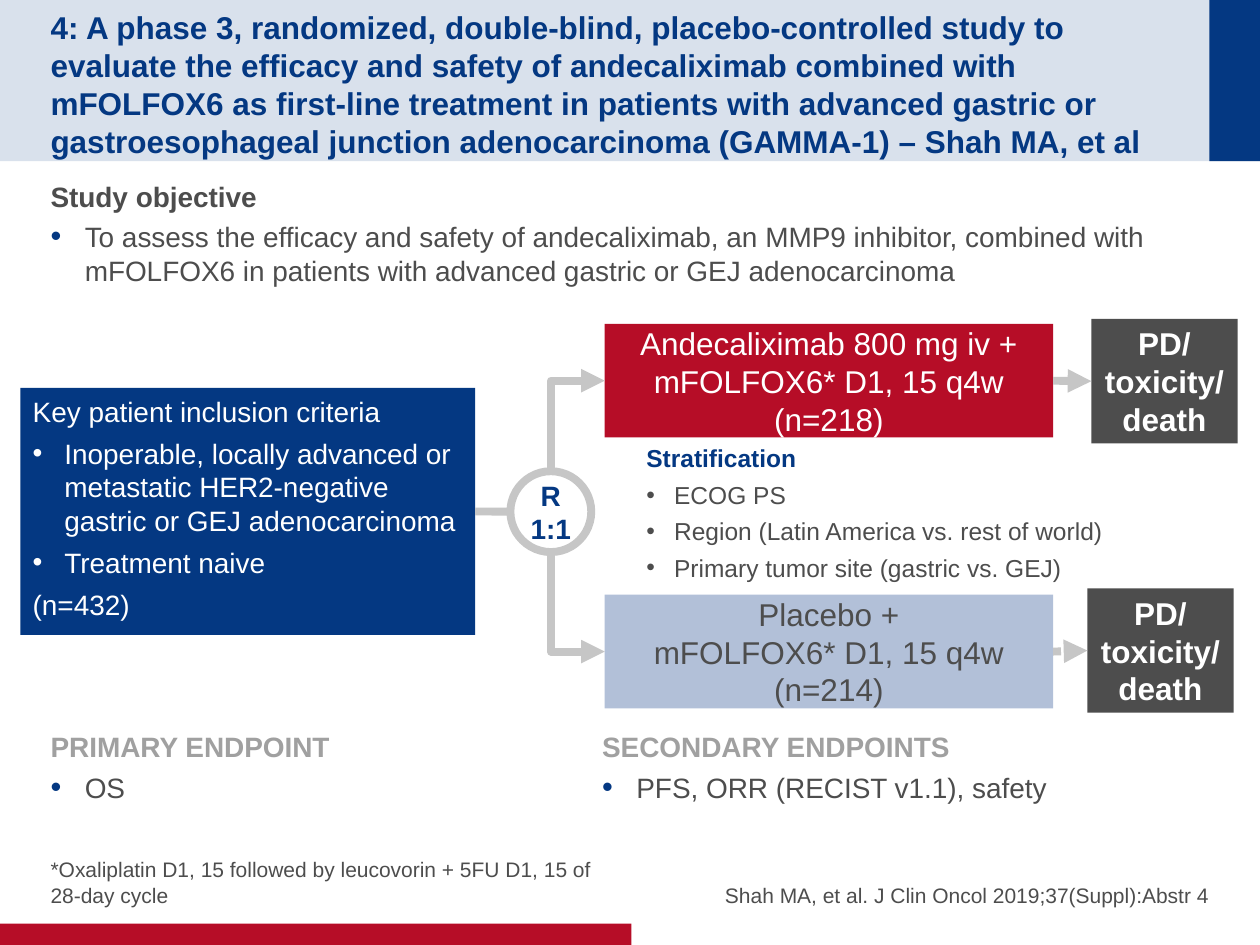
"""Build the GAMMA-1 study design slide."""
from copy import deepcopy

from lxml import etree
from pptx import Presentation
from pptx.dml.color import RGBColor
from pptx.enum.dml import MSO_LINE
from pptx.enum.shapes import MSO_CONNECTOR, MSO_SHAPE
from pptx.enum.text import MSO_ANCHOR, PP_ALIGN
from pptx.oxml.ns import qn
from pptx.util import Cm, Pt

RECT, ROUND, OVAL = MSO_SHAPE.RECTANGLE, MSO_SHAPE.ROUNDED_RECTANGLE, MSO_SHAPE.OVAL
STRAIGHT, ELBOW = MSO_CONNECTOR.STRAIGHT, MSO_CONNECTOR.ELBOW
TOP, MIDDLE, BOTTOM = MSO_ANCHOR.TOP, MSO_ANCHOR.MIDDLE, MSO_ANCHOR.BOTTOM
LEFT, CENTER, RIGHT = PP_ALIGN.LEFT, PP_ALIGN.CENTER, PP_ALIGN.RIGHT
DOTTED = MSO_LINE.ROUND_DOT
C = {"navy": "043882", "red": "B60D27", "text": "4D4D4D", "muted": "A0A0A0",
     "line": "C6C6C6", "pale": "B2C0D8", "white": "FFFFFF"}


def add_box(x, y, w, h, kind=None, fill=None, anchor=TOP, side=0, top=0, bottom=0):
    """Add a text box, or a preset shape when a kind is given."""
    place = Cm(x), Cm(y), Cm(w), Cm(h)
    if kind is None:
        sp = s.shapes.add_textbox(*place)
    else:
        sp = s.shapes.add_shape(kind, *place)
        sp.shadow.inherit = False
        sp.line.fill.background()
        if fill:
            sp.fill.solid()
            sp.fill.fore_color.rgb = RGBColor.from_string(C[fill])
        else:
            sp.fill.background()
    tf = sp.text_frame
    tf.word_wrap = True
    tf.vertical_anchor = anchor
    tf.margin_left = tf.margin_right = Cm(side)
    tf.margin_top, tf.margin_bottom = Cm(top), Cm(bottom)
    return sp


def write(sp, text, size=16, color="text", bold=False, align=LEFT, after=0,
          indent=0, bullet_color=None):
    """Append one paragraph, bulleted when an indent is given."""
    tf = sp.text_frame
    p = tf.add_paragraph() if tf.text else tf.paragraphs[0]
    p.text = text
    p.alignment = align
    p.space_after = Pt(after)
    for r in p.runs:
        r.font.name, r.font.size, r.font.bold = "Arial", Pt(size), bold
        r.font.color.rgb = RGBColor.from_string(C[color])
    for br in p._p.findall(qn("a:br")):
        br.insert(0, deepcopy(p.runs[0]._r.rPr))
    if indent:
        pPr = p._p.get_or_add_pPr()
        pPr.set("marL", str(Cm(indent)))
        pPr.set("indent", str(-Cm(indent)))
        if bullet_color:
            clr = etree.SubElement(pPr, qn("a:buClr"))
            etree.SubElement(clr, qn("a:srgbClr"), val=C[bullet_color])
            etree.SubElement(pPr, qn("a:buSzPct"), val="110000")
        etree.SubElement(pPr, qn("a:buFont"), typeface="Arial")
        etree.SubElement(pPr, qn("a:buChar"), char="•")


prs = Presentation()
prs.slide_width, prs.slide_height = Cm(25.4), Cm(19.05)
s = prs.slides.add_slide(prs.slide_layouts[6])

header = add_box(0, 0, 25.4, 3.25, RECT, "navy")
header_color = header.fill._xPr.find(".//" + qn("a:srgbClr"))
etree.SubElement(header_color, qn("a:alpha"), val="15000")
add_box(24.38, 0, 1.02, 3.25, RECT, "navy")
add_box(0, 18.62, 12.73, 0.43, RECT, "red")

title = add_box(1.02, 0.51, 22.89, 2.24, anchor=MIDDLE, top=0.13)
write(title, "4: A phase 3, randomized, double-blind, placebo-controlled study to evaluate "
      "the efficacy and safety of andecaliximab combined with mFOLFOX6 as first-line "
      "treatment in patients with advanced gastric or gastroesophageal junction "
      "adenocarcinoma (GAMMA-1) – Shah MA, et al", size=18, color="navy", bold=True)

SECTIONS = [
    (1.02, 3.48, 23.37, 13.18, 0, "text", "Study objective",
     "To assess the efficacy and safety of andecaliximab, an MMP9 inhibitor, combined "
     "with mFOLFOX6 in patients with advanced gastric or GEJ adenocarcinoma"),
    (1.02, 14.58, 11.48, 2.36, 0, "muted", "PRIMARY ENDPOINT", "OS"),
    (11.89, 14.58, 12.5, 2.36, 0.25, "muted", "SECONDARY ENDPOINTS",
     "PFS, ORR (RECIST v1.1), safety"),
]
for x, y, w, h, side, color, heading, point in SECTIONS:
    section = add_box(x, y, w, h, side=side, top=0.13, bottom=0.13)
    write(section, heading, color=color, bold=True, after=4)
    write(section, point, after=4, indent=0.69, bullet_color="navy")

FOOTNOTES = [
    (1.02, LEFT, "*Oxaliplatin D1, 15 followed by leucovorin + 5FU D1, 15 of 28-day cycle"),
    (12.9, RIGHT, "Shah MA, et al. J Clin Oncol 2019;37(Suppl):Abstr 4"),
]
for x, align, text in FOOTNOTES:
    footnote = add_box(x, 16.94, 11.48, 1.35, anchor=BOTTOM)
    write(footnote, text, size=12, align=align, after=4)

criteria = add_box(0.41, 7.82, 9.17, 4.98, ROUND, "navy", side=0.25, top=0.13, bottom=0.13)
criteria.adjustments[0] = 0
for text, indent in [
    ("Key patient inclusion criteria", 0),
    ("Inoperable, locally advanced or metastatic HER2-negative gastric or GEJ "
     "adenocarcinoma", 0.64),
    ("Treatment naive", 0.64),
    ("(n=432)", 0),
]:
    write(criteria, text, color="white", after=4.8, indent=indent)

strata = add_box(12.78, 8.81, 10.77, 2.49, side=0.25, top=0.13, bottom=0.13)
write(strata, "Stratification", size=14, color="navy", bold=True, after=4)
for text in ["ECOG PS", "Region (Latin America vs. rest of world)",
             "Primary tumor site (gastric vs. GEJ)"]:
    write(strata, text, size=14, after=4, indent=0.56)

CIRCLE_X, CIRCLE_Y, CIRCLE_D = 10.29, 9.5, 1.63
circle = add_box(CIRCLE_X, CIRCLE_Y, CIRCLE_D, CIRCLE_D, OVAL, anchor=MIDDLE)
circle.text_frame.word_wrap = False
circle.line.color.rgb = RGBColor.from_string(C["line"])
circle.line.width = Pt(4.5)
write(circle, "R\n1:1", color="navy", bold=True, align=CENTER)

link = s.shapes.add_connector(STRAIGHT, 0, 0, Cm(CIRCLE_X), Cm(CIRCLE_Y + CIRCLE_D / 2))
link.begin_connect(criteria, 3)
connectors = [(link, False)]

ARM_X, ARM_W, ARM_H = 12.19, 9.04, 2.29
ARMS = [
    (6.53, 22, 6.43, "red", "white", CIRCLE_Y, 1, None,
     "Andecaliximab 800 mg iv + mFOLFOX6* D1, 15 q4w\n(n=218)"),
    (11.99, 21.92, 11.86, "pale", "text", CIRCLE_Y + CIRCLE_D, -1, DOTTED,
     "Placebo +\nmFOLFOX6* D1, 15 q4w\n(n=214)"),
]
for y, end_x, end_y, fill, color, start_y, up, dash, text in ARMS:
    arm = add_box(ARM_X, y, ARM_W, ARM_H, RECT, fill, MIDDLE, side=0.25)
    write(arm, text, size=18, color=color, align=CENTER)
    outcome = add_box(end_x, end_y, 2.95, 2.51, RECT, "text", MIDDLE, side=0.25)
    write(outcome, "PD/\ntoxicity/\ndeath", size=18, color="white", bold=True, align=CENTER)

    start_x, arm_y = CIRCLE_X + CIRCLE_D / 2, y + ARM_H / 2
    mid_x, mid_y = (start_x + ARM_X) / 2, (start_y + arm_y) / 2
    rise, run = abs(start_y - arm_y) / 2, up * (ARM_X - start_x) / 2
    branch = s.shapes.add_connector(ELBOW, Cm(mid_x + rise), Cm(mid_y + run),
                                    Cm(mid_x - rise), Cm(mid_y - run))
    spPr = branch._element.spPr
    spPr.find(qn("a:xfrm")).set("rot", str(up * 90 % 360 * 60000))
    spPr.find(qn("a:prstGeom")).set("prst", "bentConnector2")

    arrow = s.shapes.add_connector(STRAIGHT, 0, 0, 0, 0)
    arrow.begin_connect(arm, 3)
    arrow.end_connect(outcome, 1)
    if dash:
        arrow.line.dash_style = dash
    connectors += [(branch, True), (arrow, True)]

for connector, has_head in connectors:
    connector.line.color.rgb = RGBColor.from_string(C["line"])
    connector.line.width = Pt(4.5)
    if has_head:
        etree.SubElement(connector.line._get_or_add_ln(), qn("a:tailEnd"), type="triangle")
    etree.SubElement(connector._element.spPr, qn("a:effectLst"))

prs.save("out.pptx")
